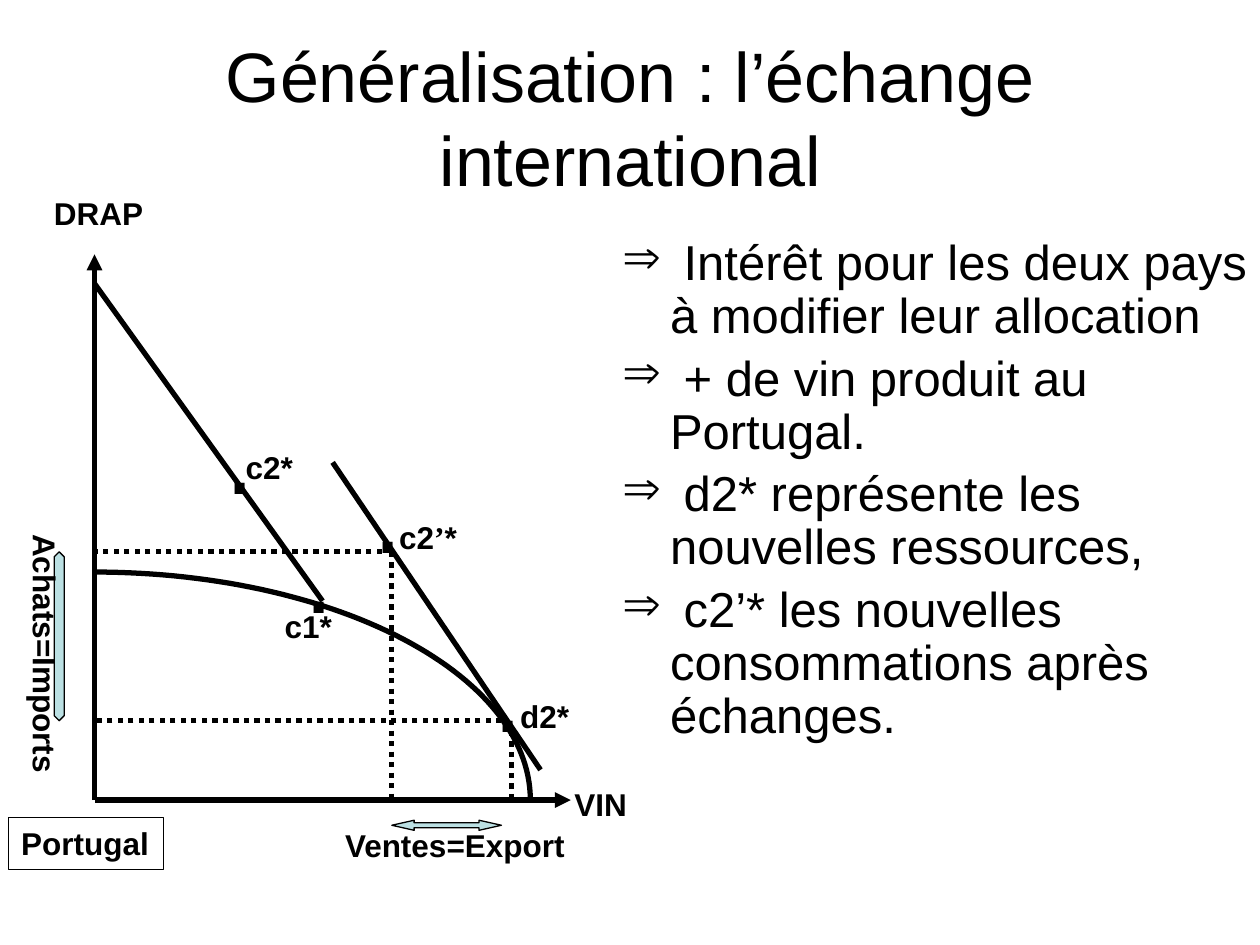
"""Builds the slide on international exchange seen from Portugal."""
from dataclasses import dataclass
from math import cos, pi, sin

from lxml.etree import SubElement
from pptx import Presentation
from pptx.dml.color import RGBColor
from pptx.enum.dml import MSO_LINE
from pptx.enum.shapes import MSO_CONNECTOR, MSO_SHAPE
from pptx.enum.text import MSO_ANCHOR, MSO_AUTO_SIZE, PP_ALIGN
from pptx.oxml.ns import qn
from pptx.util import Inches, Length, Pt

STRAIGHT = MSO_CONNECTOR.STRAIGHT
DOTTED = MSO_LINE.ROUND_DOT
RECTANGLE = MSO_SHAPE.RECTANGLE
ACROSS, UPRIGHT = MSO_SHAPE.LEFT_RIGHT_ARROW, MSO_SHAPE.UP_DOWN_ARROW
CENTER, LEFT = PP_ALIGN.CENTER, PP_ALIGN.LEFT
MIDDLE, TOP = MSO_ANCHOR.MIDDLE, MSO_ANCHOR.TOP
GROW, FIXED = MSO_AUTO_SIZE.SHAPE_TO_FIT_TEXT, MSO_AUTO_SIZE.NONE

COLUMNS, ROWS = 100, 75
CELL = Inches(0.1)


@dataclass(frozen=True)
class Theme:
    ink: RGBColor = RGBColor(0, 0, 0)
    arrow: RGBColor = RGBColor(0xBB, 0xE0, 0xE3)
    font: str = "Arial"
    serif: str = "Times New Roman"
    title: Length = Pt(40)
    body: Length = Pt(28)
    label: Length = Pt(18)
    dot: Length = Pt(60)
    thick: Length = Pt(3)
    thin: Length = Pt(0.75)


@dataclass(frozen=True)
class Area:
    column: float
    row: float
    columns: float
    rows: float

    def lengths(self) -> list:
        return [cells(n) for n in (self.column, self.row, self.columns, self.rows)]


@dataclass(frozen=True)
class Stroke:
    start: tuple
    end: tuple
    arrow: bool = False
    dotted: bool = False


@dataclass(frozen=True)
class Label:
    spans: tuple
    area: Area
    vertical: bool = False


@dataclass(frozen=True)
class DoubleArrow:
    kind: MSO_SHAPE
    area: Area
    head: float


THEME = Theme()
ORIGIN_X, ORIGIN_Y = 7.5, 63.5
CURVE_TOP, CURVE_RIGHT = 45.4, 42.1
SALE_X, SALE_Y = 31.1, 43.8
MADE_X, MADE_Y = 40.6, 57.2
HEIGHT = 4

STROKES = (
    Stroke((ORIGIN_X, ORIGIN_Y), (ORIGIN_X, 20.2), arrow=True),
    Stroke((ORIGIN_X, ORIGIN_Y), (45.3, ORIGIN_Y), arrow=True),
    Stroke((25.6, 47.7), (ORIGIN_X, 22.5)),
    Stroke((42.9, 61.1), (26.4, 36.7)),
    Stroke((SALE_X, SALE_Y), (SALE_X, ORIGIN_Y), dotted=True),
    Stroke((MADE_X, 58), (MADE_X, ORIGIN_Y), dotted=True),
    Stroke((30.3, SALE_Y), (ORIGIN_X, SALE_Y), dotted=True),
    Stroke((39.8, MADE_Y), (ORIGIN_X, MADE_Y), dotted=True),
)
DOTS = ((23.2, 39.9), (38.2, 49.3), (28.7, 35.1), (16.9, 30.4))
LABELS = (
    Label(("c1*",), Area(21.6, 47.7, 5.8, HEIGHT)),
    Label(("d2*",), Area(40.3, 54.8, 5.9, HEIGHT)),
    Label(("c2", "’", "*"), Area(30.7, 40.6, 6.6, HEIGHT)),
    Label(("c2*",), Area(18.5, 35.1, 5.8, HEIGHT)),
    Label(("VIN",), Area(44.6, 61.8, 6.2, HEIGHT)),
    Label(("DRAP",), Area(3.3, 14.9, 9.1, HEIGHT)),
    Label(("Ventes=Export",), Area(26.4, 65.1, 19.6, HEIGHT)),
    Label(("Achats=Imports",), Area(-4.3, 41.4, 9.9, HEIGHT), vertical=True),
)
ARROWS = (
    DoubleArrow(ACROSS, Area(SALE_X, 65.1, 8.7, 0.8), 2.22),
    DoubleArrow(UPRIGHT, Area(4.3, SALE_Y, 0.8, MADE_Y - SALE_Y), 3.35),
)
POINTS = (
    " Intérêt pour les deux pays à modifier leur allocation",
    " + de vin produit au Portugal.",
    " d2* représente les nouvelles ressources,",
    " c2’* les nouvelles consommations après échanges.",
)


def cells(count: float) -> Length:
    """Turns a count of grid cells into a length."""
    return Length(round(count * CELL))


def apply(target, values: dict) -> None:
    """Sets each named attribute of the target."""
    for name, value in values.items():
        setattr(target, name, value)


def write(para, spans: tuple, size: Length, bold: bool = False) -> None:
    """Adds the spans to a paragraph, with the apostrophe span in serif."""
    for text in spans:
        span = para.add_run()
        span.text = text
        font = THEME.serif if text == "’" else THEME.font
        apply(span.font, {"name": font, "size": size, "bold": bold})
        span.font.color.rgb = THEME.ink


def add_text(page, area: Area, spans: tuple, size: Length, bold: bool = False):
    """Draws one unwrapped text box and returns its frame."""
    frame = page.shapes.add_textbox(*area.lengths()).text_frame
    apply(frame, {"word_wrap": False, "auto_size": GROW})
    write(frame.paragraphs[0], spans, size, bold)
    return frame


def add_label(page, label: Label) -> None:
    """Draws a bold label, turned when it is vertical."""
    frame = add_text(page, label.area, label.spans, THEME.label, True)
    if label.vertical:
        frame.auto_size = FIXED
        frame._txBody.bodyPr.set("vert", "eaVert")


def add_title(page, text: str) -> None:
    """Draws the centred title."""
    frame = add_text(page, Area(5, 3, 90, 12.5), (text,), THEME.title)
    apply(frame, {"word_wrap": True, "auto_size": FIXED, "vertical_anchor": MIDDLE})
    frame.paragraphs[0].alignment = CENTER


def add_points(page, points: tuple) -> None:
    """Draws the list with double arrow bullets."""
    frame = page.shapes.add_textbox(*Area(48.4, 13.9, 51.6, 53.6).lengths()).text_frame
    apply(frame, {"word_wrap": True, "auto_size": FIXED, "margin_top": cells(5)})
    for index, text in enumerate(points):
        para = frame.add_paragraph() if index else frame.paragraphs[0]
        apply(para, {"line_spacing": 0.9, "space_before": Pt(5.6)})
        write(para, (text,), THEME.body)
        properties = para._p.get_or_add_pPr()
        indent = cells(3.8)
        properties.set("marL", str(indent))
        properties.set("indent", str(-indent))
        SubElement(properties, qn("a:buChar")).set("char", "⇒")


def outline(shape, width: Length) -> None:
    """Gives a shape or connector a plain line."""
    shape.line.color.rgb = THEME.ink
    shape.line.width = width


def add_stroke(page, stroke: Stroke) -> None:
    """Draws a straight line, dotted or with an arrowhead."""
    ends = [cells(n) for n in (*stroke.start, *stroke.end)]
    line = page.shapes.add_connector(STRAIGHT, *ends)
    outline(line, THEME.thick)
    if stroke.dotted:
        line.line.dash_style = DOTTED
    if stroke.arrow:
        SubElement(line.line._get_or_add_ln(), qn("a:tailEnd")).set("type", "triangle")
    SubElement(line._element.spPr, qn("a:effectLst"))


def add_curve(page, steps: int = 60) -> None:
    """Draws the production frontier as a quarter of an ellipse."""
    width, height = CURVE_RIGHT - ORIGIN_X, ORIGIN_Y - CURVE_TOP
    angles = [pi / 2 * step / steps for step in range(steps + 1)]
    spots = [(cells(ORIGIN_X + width * sin(a)), cells(ORIGIN_Y - height * cos(a))) for a in angles]
    builder = page.shapes.build_freeform(*spots[0])
    builder.add_line_segments(spots[1:], close=False)
    curve = builder.convert_to_shape()
    curve.fill.background()
    curve.shadow.inherit = False
    outline(curve, THEME.thick)


def add_arrow(page, arrow: DoubleArrow) -> None:
    """Draws a thin double arrow."""
    shape = page.shapes.add_shape(arrow.kind, *arrow.area.lengths())
    shape.adjustments[1] = arrow.head
    shape.shadow.inherit = False
    shape.fill.solid()
    shape.fill.fore_color.rgb = THEME.arrow
    outline(shape, THEME.thin)


def add_country(page, name: str) -> None:
    """Draws the framed country name."""
    box = page.shapes.add_shape(RECTANGLE, *Area(0.7, 64.9, 12.3, 4.1).lengths())
    box.shadow.inherit = False
    box.fill.background()
    outline(box, THEME.thin)
    apply(box.text_frame, {"word_wrap": False, "auto_size": GROW, "vertical_anchor": TOP})
    para = box.text_frame.paragraphs[0]
    para.alignment = LEFT
    write(para, (name,), THEME.label, True)


def main() -> None:
    """Builds and saves the deck."""
    deck = Presentation()
    apply(deck, {"slide_width": cells(COLUMNS), "slide_height": cells(ROWS)})
    page = deck.slides.add_slide(deck.slide_layouts[6])
    add_title(page, "Généralisation : l’échange international")
    add_points(page, POINTS)
    for stroke in STROKES:
        add_stroke(page, stroke)
    add_curve(page)
    for column, row in DOTS:
        add_text(page, Area(column, row, 4.3, 11), (".",), THEME.dot)
    for arrow in ARROWS:
        add_arrow(page, arrow)
    for label in LABELS:
        add_label(page, label)
    add_country(page, "Portugal")
    deck.save("out.pptx")


if __name__ == "__main__":
    main()
